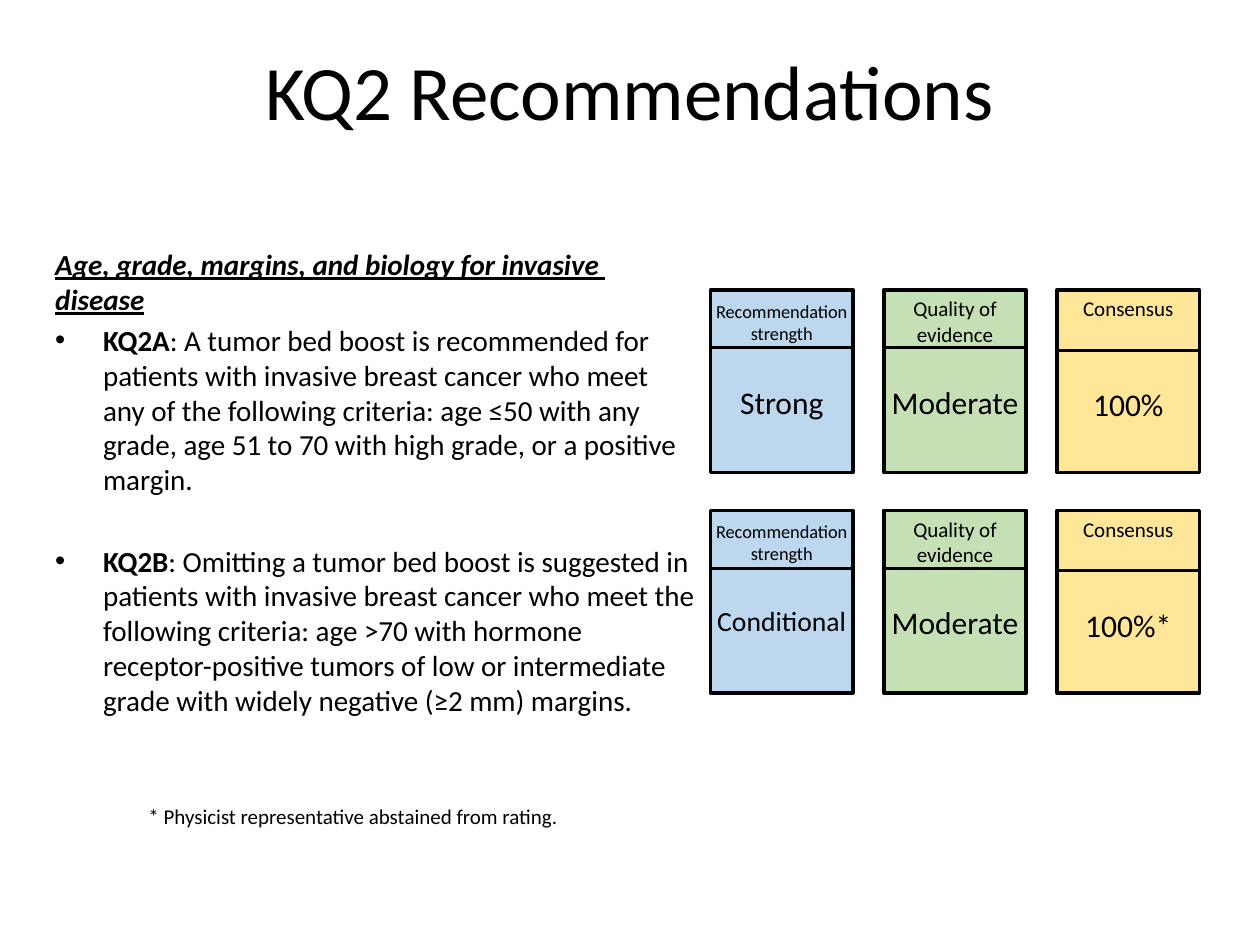
from lxml import etree
from pptx import Presentation
from pptx.dml.color import RGBColor
from pptx.enum import shapes, text
from pptx.oxml.ns import qn
from pptx.util import Inches, Pt

BLACK = RGBColor(0x00, 0x00, 0x00)
BLUE = RGBColor(0xBD, 0xD7, 0xEE)
GREEN = RGBColor(0xC5, 0xE0, 0xB4)
YELLOW = RGBColor(0xFF, 0xE6, 0x99)


def add_text(left, top, width, height, wording, size, align=text.PP_ALIGN.LEFT,
             side=0.1, edge=0.05):
    """Add a wrapped text box; side and edge are its insets in inches."""
    frame = slide.shapes.add_textbox(
        Inches(left), Inches(top), Inches(width), Inches(height)).text_frame
    frame.word_wrap = True
    frame.margin_left = frame.margin_right = Inches(side)
    frame.margin_top = frame.margin_bottom = Inches(edge)
    frame.text = wording
    for paragraph in frame.paragraphs:
        paragraph.alignment = align
        for run in paragraph.runs:
            style_font(run.font, size)
    return frame


def style_font(font, size):
    font.name = "Calibri"
    font.size = Pt(size)
    font.color.rgb = BLACK


prs = Presentation()
prs.slide_width, prs.slide_height = Inches(10), Inches(7.5)
slide = prs.slides.add_slide(prs.slide_layouts[6])
center = text.PP_ALIGN.CENTER

add_text(0.5, 0.3, 9, 1.25, "KQ2 Recommendations", 44, center)

# Recommendations
BODY_SIZE = 16.6
body = add_text(0.34, 1.91, 5.3, 3.87,
                "Age, grade, margins, and biology for invasive \vdisease",
                BODY_SIZE)
for run in body.paragraphs[0].runs:
    run.font.bold = run.font.italic = run.font.underline = True

recommendations = [
    ("KQ2A", [": A tumor bed boost is recommended for patients with invasive "
              "breast cancer who meet ",
              "any of the following criteria: age ≤50 with any grade, age 51 "
              "to 70 with high grade, or a positive margin."], 3.3),
    ("KQ2B", [": Omitting a tumor bed boost is suggested in patients with "
              "invasive breast cancer who meet the following criteria: age "
              ">70 with hormone ",
              "receptor-positive tumors of low or intermediate grade with "
              "widely negative (≥2 mm) margins."], 26.5),
]
for code, statement, gap in recommendations:
    item = body.add_paragraph()
    item.space_before = Pt(gap)
    properties = item._p.get_or_add_pPr()
    properties.set("marL", str(Inches(0.38)))
    properties.set("indent", str(-Inches(0.38)))
    etree.SubElement(properties, qn("a:buFont")).set("typeface", "Arial")
    etree.SubElement(properties, qn("a:buChar")).set("char", "•")
    for position, wording in enumerate([code, *statement]):
        if position > 1:
            item.add_line_break()
        run = item.add_run()
        run.text = wording
        style_font(run.font, BODY_SIZE)
        run.font.bold = position == 0

# Line breaks need the size of the text around them
for line_break in body._txBody.iter(qn("a:br")):
    etree.SubElement(line_break, qn("a:rPr")).set("sz", str(round(BODY_SIZE * 100)))

# Rating cards: one row per recommendation, one column per measure
CARD_WIDTH, CARD_HEIGHT = 1.13, 1.45
measures = [
    # label, label size, side and edge insets, label height, divider, fill
    ("Recommendation strength", 10.5, 0.04, 0.08, 0.5, 0.46, BLUE),
    ("Quality of evidence", 12, 0.1, 0.05, 0.5, 0.46, GREEN),
    ("Consensus", 12, 0.1, 0.05, 0.3, 0.48, YELLOW),
]
ratings = [
    [("Strong", 18), ("Moderate", 18), ("100%", 18)],
    [("Conditional", 15.8), ("Moderate", 18), ("100%*", 18)],
]
for row, row_ratings in enumerate(ratings):
    top = 2.3 + 1.75 * row
    for column, (measure, rating) in enumerate(zip(measures, row_ratings)):
        label, label_size, side, edge, label_height, divider_drop, fill = measure
        value, value_size = rating
        left = 5.64 + 1.375 * column
        divider_y = top + divider_drop

        card = slide.shapes.add_shape(
            shapes.MSO_SHAPE.RECTANGLE, Inches(left), Inches(top),
            Inches(CARD_WIDTH), Inches(CARD_HEIGHT))
        card.shadow.inherit = False
        card.fill.solid()
        card.fill.fore_color.rgb = fill
        card.line.color.rgb = BLACK
        card.line.width = Pt(2)

        divider = slide.shapes.add_connector(
            shapes.MSO_CONNECTOR.STRAIGHT, Inches(left), Inches(divider_y),
            Inches(left + CARD_WIDTH), Inches(divider_y))
        divider.line.color.rgb = BLACK
        divider.line.width = Pt(1.5)
        etree.SubElement(divider._element.spPr, qn("a:effectLst"))

        add_text(left, top, CARD_WIDTH, label_height, label, label_size,
                 center, side, edge)
        add_text(left, divider_y + 0.23, CARD_WIDTH, 0.4, value, value_size,
                 center, side=0.04)

add_text(1.08, 6.33, 3.46, 0.3,
         "* Physicist representative abstained from rating.", 12)

prs.save("out.pptx")
